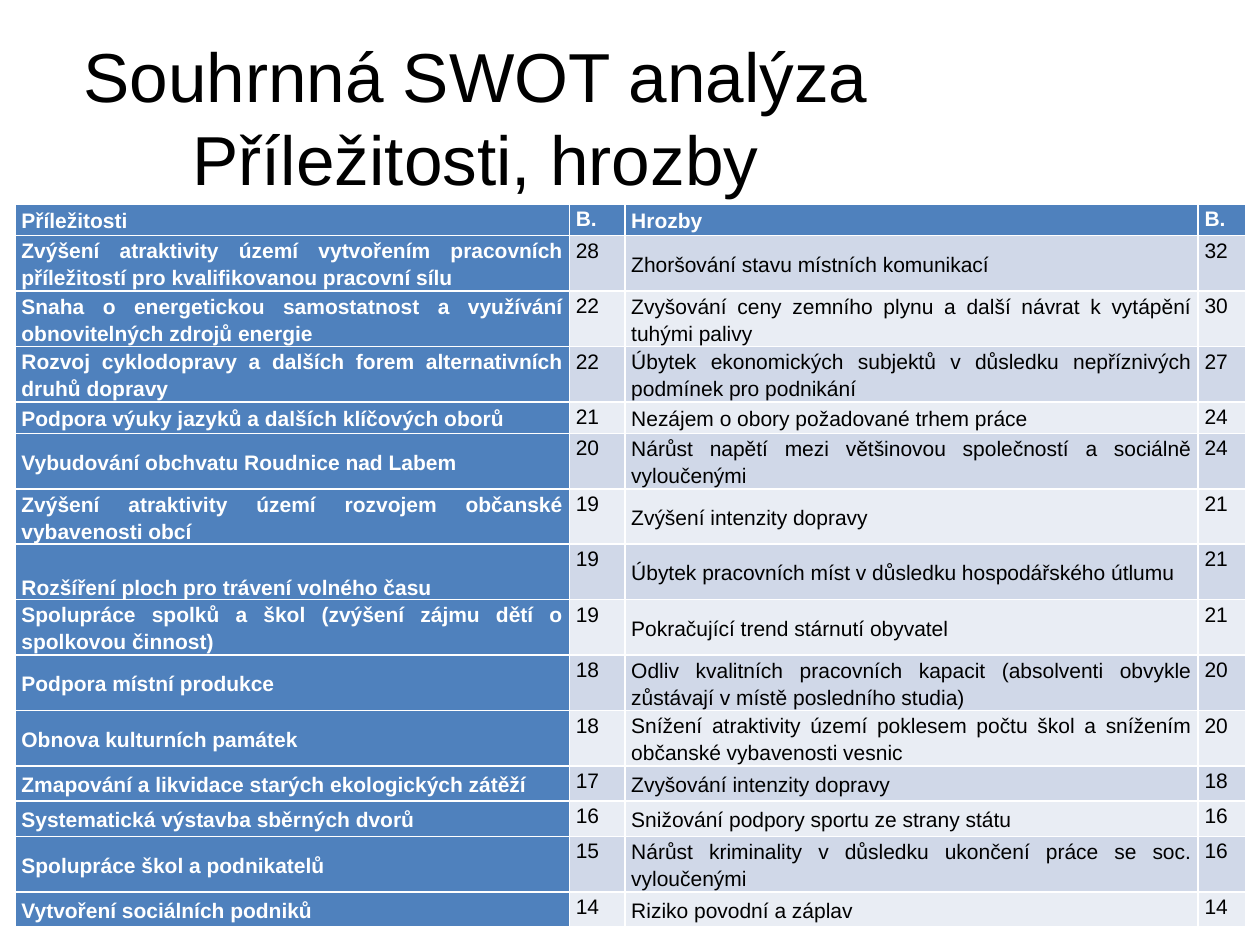
import pptx
import pptx.util
import pptx.dml.color
import pptx.enum.text

Inches = pptx.util.Inches
Align = pptx.enum.text.PP_ALIGN
Anchor = pptx.enum.text.MSO_ANCHOR


def color(code):
    return pptx.dml.color.RGBColor.from_string(code)


def style(par, size, code, bold, align):
    par.alignment = align
    for run in par.runs:
        run.font.name = "Arial"
        run.font.size = pptx.util.Pt(size)
        run.font.bold = bold
        run.font.color.rgb = color(code)


deck = pptx.Presentation()
deck.slide_width = Inches(10)
deck.slide_height = Inches(7.5)
slide = deck.slides.add_slide(deck.slide_layouts[5])

title = slide.shapes.title
title.left, title.top = Inches(0.5), Inches(0.3)
title.width, title.height = Inches(6.55), Inches(1.25)
title.text_frame.text = "Souhrnná SWOT analýza\vPříležitosti, hrozby"
title.text_frame.word_wrap = True
title.text_frame.auto_size = pptx.enum.text.MSO_AUTO_SIZE.NONE
title.text_frame.vertical_anchor = Anchor.MIDDLE
style(title.text_frame.paragraphs[0], 39.6, "000000", False, Align.CENTER)

rows = [
    ("Příležitosti", "B.", "Hrozby", "B."),
    ("Zvýšení atraktivity území vytvořením pracovních příležitostí pro kvalifikovanou pracovní sílu", "28",
     "Zhoršování stavu místních komunikací", "32"),
    ("Snaha o energetickou samostatnost a využívání obnovitelných zdrojů energie", "22",
     "Zvyšování ceny zemního plynu a další návrat k vytápění tuhými palivy", "30"),
    ("Rozvoj cyklodopravy a dalších forem alternativních druhů dopravy", "22",
     "Úbytek ekonomických subjektů v důsledku nepříznivých podmínek pro podnikání", "27"),
    ("Podpora výuky jazyků a dalších klíčových oborů", "21",
     "Nezájem o obory požadované trhem práce", "24"),
    ("Vybudování obchvatu Roudnice nad Labem", "20",
     "Nárůst napětí mezi většinovou společností a sociálně vyloučenými", "24"),
    ("Zvýšení atraktivity území rozvojem občanské vybavenosti obcí", "19",
     "Zvýšení intenzity dopravy", "21"),
    ("Rozšíření ploch pro trávení volného času", "19",
     "Úbytek pracovních míst v důsledku hospodářského útlumu", "21"),
    ("Spolupráce spolků a škol (zvýšení zájmu dětí o spolkovou činnost)", "19",
     "Pokračující trend stárnutí obyvatel", "21"),
    ("Podpora místní produkce", "18",
     "Odliv kvalitních pracovních kapacit (absolventi obvykle zůstávají v místě posledního studia)", "20"),
    ("Obnova kulturních památek", "18",
     "Snížení atraktivity území poklesem počtu škol a snížením občanské vybavenosti vesnic", "20"),
    ("Zmapování a likvidace starých ekologických zátěží", "17",
     "Zvyšování intenzity dopravy", "18"),
    ("Systematická výstavba sběrných dvorů", "16",
     "Snižování podpory sportu ze strany státu", "16"),
    ("Spolupráce škol a podnikatelů", "15",
     "Nárůst kriminality v důsledku ukončení práce se soc. vyloučenými", "16"),
    ("Vytvoření sociálních podniků", "14",
     "Riziko povodní a záplav", "14"),
]
widths = [4.4, 0.44, 4.55, 0.38]
low = {0: 0.25, 4: 0.25, 11: 0.28, 12: 0.28, 14: 0.28}

frame = slide.shapes.add_table(len(rows), len(widths), Inches(0.12), Inches(1.62),
                               Inches(9.76), Inches(5.91))
table = frame.table
for col, width in zip(table.columns, widths):
    col.width = Inches(width)

for r, row in enumerate(rows):
    table.rows[r].height = Inches(low.get(r, 0.44))
    for c, text in enumerate(row):
        cell = table.cell(r, c)
        head = r == 0 or c == 0
        base = text.startswith("Rozšíření")
        cell.fill.solid()
        cell.fill.fore_color.rgb = color("4F81BD" if head else "D0D8E8" if r % 2 else "E9EDF4")
        cell.margin_left = cell.margin_right = Inches(0.05)
        cell.margin_top = cell.margin_bottom = 0
        cell.vertical_anchor = Anchor.BOTTOM if base else Anchor.TOP if c % 2 else Anchor.MIDDLE
        cell.text_frame.text = text
        par = cell.text_frame.paragraphs[0]
        par.line_spacing = 1.15
        style(par, 12, "FFFFFF" if head else "000000", head, Align.LEFT if base else Align.JUSTIFY)

deck.save("out.pptx")
